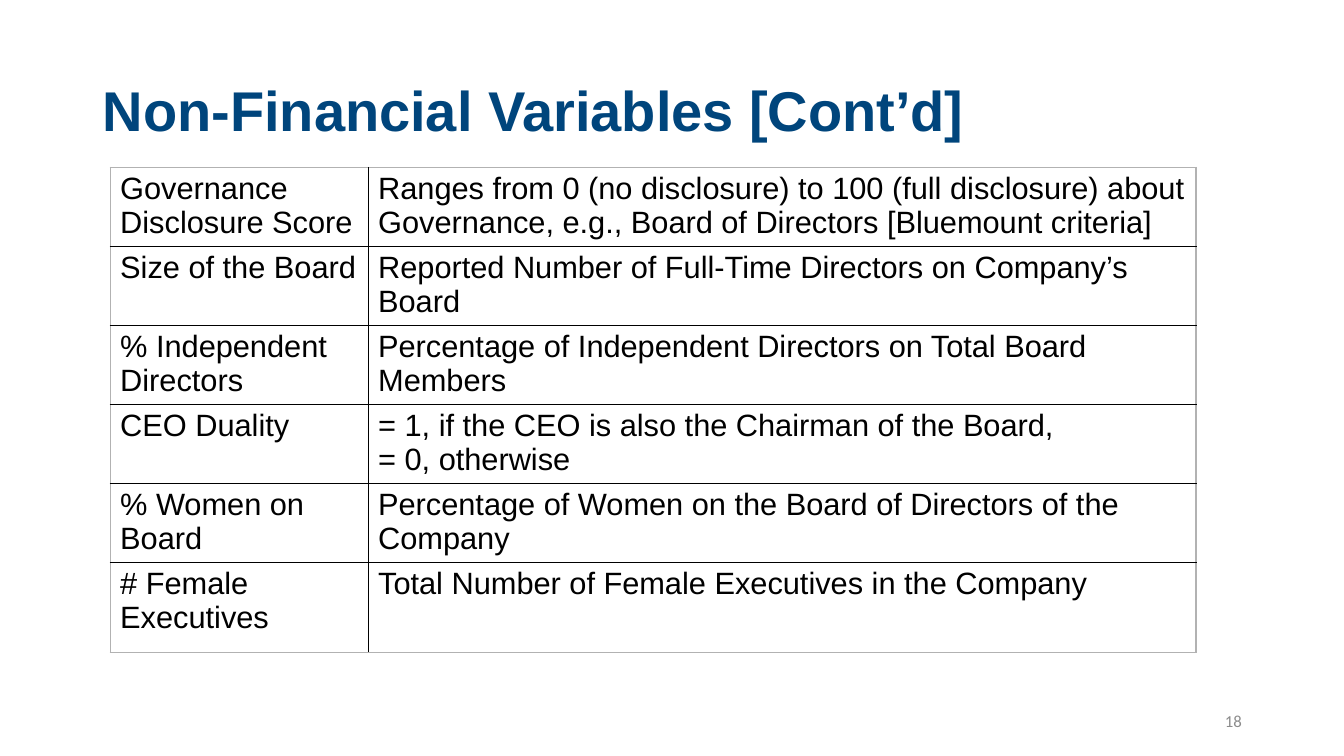
"""Build the slide that defines the non-financial variables."""
from dataclasses import dataclass

from lxml import etree
from pptx import Presentation
from pptx.dml.color import RGBColor
from pptx.enum.text import MSO_ANCHOR, MSO_AUTO_SIZE, PP_ALIGN
from pptx.oxml.ns import qn
from pptx.slide import Slide
from pptx.table import Table, _Cell
from pptx.text.text import TextFrame
from pptx.util import Cm, Pt

NAVY = RGBColor(0x00, 0x45, 0x7C)
BLACK = RGBColor(0x00, 0x00, 0x00)
SILVER = RGBColor(0xB2, 0xB2, 0xB2)
GRAY = RGBColor(0x8C, 0x8C, 0x8C)
MIDDLE = MSO_ANCHOR.MIDDLE
TOP = MSO_ANCHOR.TOP
NO_AUTOFIT = MSO_AUTO_SIZE.NONE
LEFT = PP_ALIGN.LEFT
RIGHT = PP_ALIGN.RIGHT

TITLE_ONLY = 5
COLUMN_WIDTHS = (Cm(6.5), Cm(20.86))
ROW_HEIGHT = Cm(1.99)
LAST_ROW_HEIGHT = Cm(2.27)
BORDER_WIDTH = Pt(1)
CELL_FORMAT = {
    "margin_left": Cm(0.25),
    "margin_right": Cm(0.2),
    "margin_top": Cm(0.1),
    "margin_bottom": Cm(0.1),
    "vertical_anchor": TOP,
}
TABLE_FLAGS = {"first_row": False, "horz_banding": False}
FRAME_FORMAT = {"word_wrap": True, "auto_size": NO_AUTOFIT, "vertical_anchor": MIDDLE}


@dataclass(frozen=True)
class TextStyle:
    name: str
    size: int
    color: RGBColor
    bold: bool = False
    alignment: PP_ALIGN = LEFT
    line_spacing: float = 1.0


@dataclass(frozen=True)
class Variable:
    name: str
    definition: str


TITLE_STYLE = TextStyle("Arial", 40, NAVY, bold=True, line_spacing=0.9)
CELL_STYLE = TextStyle("Arial", 22, BLACK)
NUMBER_STYLE = TextStyle("Calibri", 12, GRAY, alignment=RIGHT)

VARIABLES = (
    Variable(
        "Governance Disclosure Score",
        "Ranges from 0 (no disclosure) to 100 (full disclosure) about "
        "Governance, e.g., Board of Directors [Bluemount criteria]",
    ),
    Variable("Size of the Board", "Reported Number of Full-Time Directors on Company’s Board"),
    Variable("% Independent Directors", "Percentage of Independent Directors on Total Board Members"),
    Variable("CEO Duality", "= 1, if the CEO is also the Chairman of the Board,\n= 0, otherwise"),
    Variable("% Women on Board", "Percentage of Women on the Board of Directors of the Company"),
    Variable("# Female Executives", "Total Number of Female Executives in the Company"),
)


def apply_format(target: object, values: dict) -> None:
    for name, value in values.items():
        setattr(target, name, value)


def write_text(frame: TextFrame, text: str, style: TextStyle) -> None:
    frame.text = text
    for para in frame.paragraphs:
        apply_format(para, {"alignment": style.alignment, "line_spacing": style.line_spacing})
        for span in para.runs:
            apply_format(
                span.font,
                {"name": style.name, "size": Pt(style.size), "bold": style.bold},
            )
            span.font.color.rgb = style.color


def draw_borders(cell: _Cell, colors: dict[str, RGBColor]) -> None:
    properties = cell._tc.get_or_add_tcPr()
    for index, (side, color) in enumerate(colors.items()):
        line = etree.Element(qn(f"a:ln{side}"), w=str(BORDER_WIDTH))
        fill = etree.SubElement(line, qn("a:solidFill"))
        etree.SubElement(fill, qn("a:srgbClr"), val=str(color))
        properties.insert(index, line)


def fill_cell(table: Table, row: int, column: int, text: str) -> None:
    cell = table.cell(row, column)
    apply_format(cell, CELL_FORMAT)
    cell.fill.background()
    write_text(cell.text_frame, text, CELL_STYLE)
    outer_sides = {
        "L": column == 0,
        "R": column == len(COLUMN_WIDTHS) - 1,
        "T": row == 0,
        "B": row == len(VARIABLES) - 1,
    }
    draw_borders(cell, {side: SILVER if outer else BLACK for side, outer in outer_sides.items()})


def add_title(slide: Slide) -> None:
    title = slide.shapes.title
    apply_format(
        title, {"left": Cm(2.34), "top": Cm(1.02), "width": Cm(29.21), "height": Cm(3.68)}
    )
    apply_format(title.text_frame, FRAME_FORMAT)
    write_text(title.text_frame, "Non-Financial Variables [Cont’d]", TITLE_STYLE)


def add_variable_table(slide: Slide) -> None:
    height = ROW_HEIGHT * (len(VARIABLES) - 1) + LAST_ROW_HEIGHT
    table = slide.shapes.add_table(
        len(VARIABLES), len(COLUMN_WIDTHS), Cm(2.78), Cm(4.22), sum(COLUMN_WIDTHS), height
    ).table
    apply_format(table, TABLE_FLAGS)
    for column, width in zip(table.columns, COLUMN_WIDTHS):
        column.width = width
    for row, variable in enumerate(VARIABLES):
        table.rows[row].height = ROW_HEIGHT
        for column, text in enumerate((variable.name, variable.definition)):
            fill_cell(table, row, column, text)
    table.rows[len(VARIABLES) - 1].height = LAST_ROW_HEIGHT


def add_page_number(slide: Slide) -> None:
    box = slide.shapes.add_textbox(Cm(23.93), Cm(17.65), Cm(7.62), Cm(1.02))
    apply_format(box.text_frame, FRAME_FORMAT)
    write_text(box.text_frame, "18", NUMBER_STYLE)


def main() -> None:
    deck = Presentation()
    apply_format(deck, {"slide_width": Cm(33.87), "slide_height": Cm(19.05)})
    slide = deck.slides.add_slide(deck.slide_layouts[TITLE_ONLY])
    add_title(slide)
    add_variable_table(slide)
    add_page_number(slide)
    deck.save("out.pptx")


if __name__ == "__main__":
    main()
